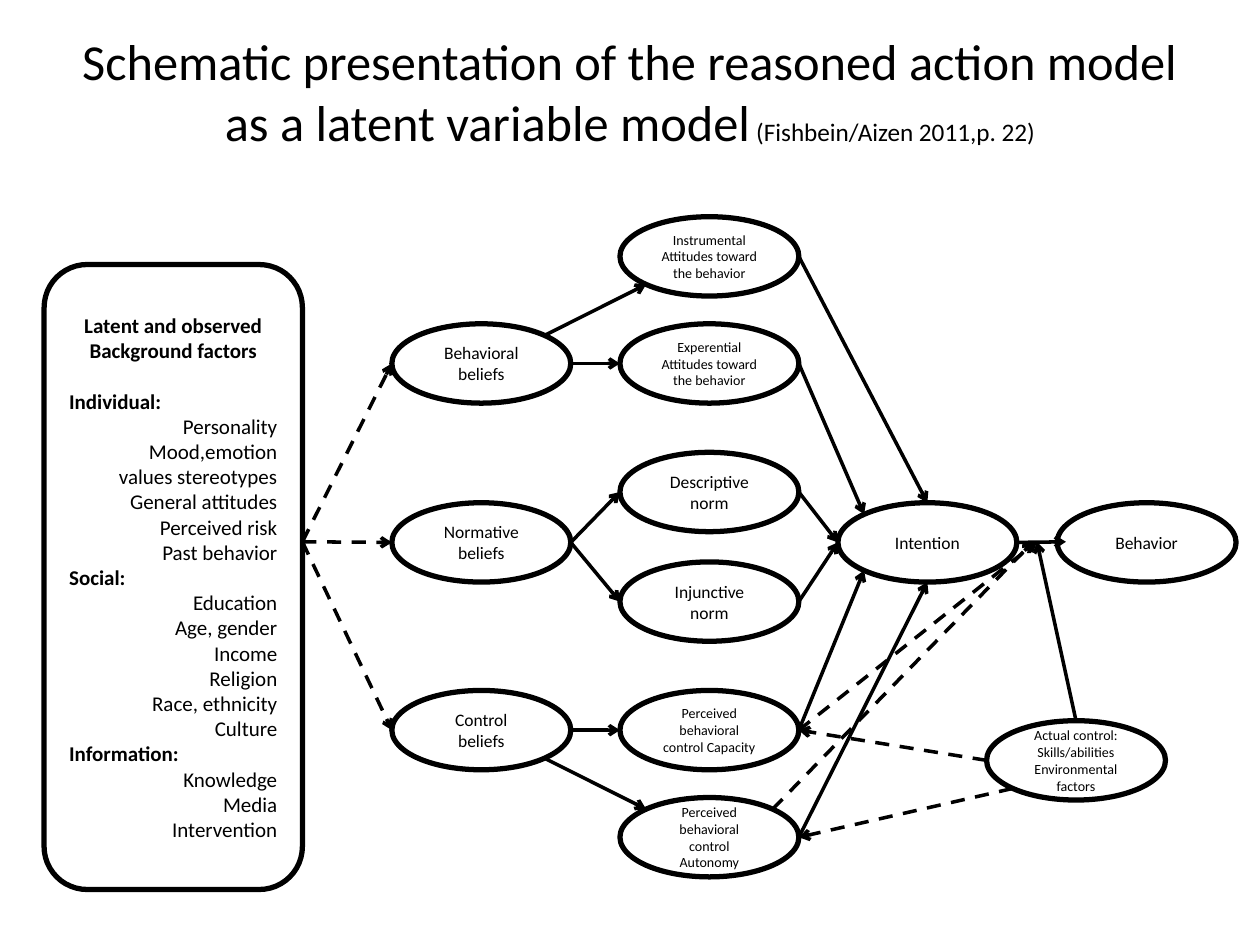
import math
from dataclasses import dataclass
from typing import NamedTuple

import pptx
import pptx.dml.color
import pptx.enum.dml
import pptx.enum.shapes
import pptx.enum.text
import pptx.oxml
import pptx.util
from pptx.util import Inches

ALIGN = pptx.enum.text.PP_ALIGN
MIDDLE = pptx.enum.text.MSO_ANCHOR.MIDDLE
SHAPES = pptx.enum.shapes.MSO_SHAPE


@dataclass(frozen=True)
class Theme:
    ink: pptx.dml.color.RGBColor = pptx.dml.color.RGBColor(0, 0, 0)
    font: str = "Calibri"
    title: float = 28.8
    source: float = 14.4
    factors: float = 12
    label: float = 10
    small: float = 8
    outline: float = 3
    arrow: float = 2


THEME = Theme()


class Point(NamedTuple):
    x: float
    y: float


@dataclass(frozen=True)
class Oval:
    left: float
    top: float
    lines: tuple[str, ...]
    size: float = THEME.label
    width: float = 1.42
    height: float = 0.63

    def at(self, degrees: float) -> Point:
        """Point on the rim, counted anticlockwise from the right."""
        angle = math.radians(degrees)
        return Point(self.left + self.width / 2 * (1 + math.cos(angle)),
                     self.top + self.height / 2 * (1 - math.sin(angle)))


class Arrow(NamedTuple):
    start: Point
    end: Point
    dashed: bool = False


RIGHT, TOP_RIGHT, TOP, TOP_LEFT, LEFT, BOTTOM_LEFT, BOTTOM, BOTTOM_RIGHT = range(0, 360, 45)
BELIEFS_X, FACTORS_X = 3.11, 4.92
MAIN_Y, BEHAVIORAL_Y, CONTROL_Y = 3.99, 2.57, 5.48

behavioral = Oval(BELIEFS_X, BEHAVIORAL_Y, ("Behavioral beliefs",))
normative = Oval(BELIEFS_X, MAIN_Y, ("Normative beliefs",))
control = Oval(BELIEFS_X, CONTROL_Y, ("Control beliefs",))
instrumental = Oval(FACTORS_X, 1.72, ("Instrumental Attitudes toward the behavior",), THEME.small)
experiential = Oval(FACTORS_X, BEHAVIORAL_Y, ("Experential Attitudes toward the behavior",), THEME.small)
descriptive = Oval(FACTORS_X, 3.59, ("Descriptive norm",))
injunctive = Oval(FACTORS_X, 4.46, ("Injunctive norm",))
capacity = Oval(FACTORS_X, CONTROL_Y, ("Perceived behavioral control Capacity",), THEME.small)
autonomy = Oval(FACTORS_X, 6.33, ("Perceived behavioral control Autonomy",), THEME.small)
intention = Oval(6.65, MAIN_Y, ("Intention",))
behavior = Oval(8.39, MAIN_Y, ("Behavior",))
actual = Oval(7.83, 5.72, ("Actual control:", "Skills/abilities Environmental factors"), THEME.small)

OVALS = (behavioral, normative, control, instrumental, experiential, descriptive,
         injunctive, capacity, autonomy, intention, behavior, actual)

background_exit = Point(2.4, 4.3)
moderation = Point(8.23, 4.3)

ARROWS = (
    *(Arrow(background_exit, belief.at(LEFT), True) for belief in (behavioral, normative, control)),
    Arrow(behavioral.at(TOP_RIGHT), instrumental.at(BOTTOM_LEFT)),
    Arrow(behavioral.at(RIGHT), experiential.at(LEFT)),
    Arrow(normative.at(RIGHT), descriptive.at(LEFT)),
    Arrow(normative.at(RIGHT), injunctive.at(LEFT)),
    Arrow(control.at(RIGHT), capacity.at(LEFT)),
    Arrow(control.at(BOTTOM_RIGHT), autonomy.at(TOP_LEFT)),
    Arrow(instrumental.at(RIGHT), intention.at(TOP)),
    Arrow(experiential.at(RIGHT), intention.at(TOP_LEFT)),
    Arrow(descriptive.at(RIGHT), intention.at(LEFT)),
    Arrow(injunctive.at(RIGHT), intention.at(LEFT)),
    Arrow(capacity.at(RIGHT), intention.at(BOTTOM_LEFT)),
    Arrow(autonomy.at(RIGHT), intention.at(BOTTOM)),
    Arrow(intention.at(RIGHT), Point(8.46, 4.3)),
    Arrow(actual.at(TOP), moderation),
    Arrow(actual.at(LEFT), capacity.at(RIGHT), True),
    Arrow(actual.at(BOTTOM_LEFT), autonomy.at(RIGHT), True),
    Arrow(capacity.at(RIGHT), moderation, True),
    Arrow(autonomy.at(TOP_RIGHT), Point(8.2, 4.3), True),
)

BACKGROUND_FACTORS = {
    "Individual:": ("Personality", "Mood,emotion", "values stereotypes",
                    "General attitudes", "Perceived risk", "Past behavior"),
    "Social:": ("Education", "Age, gender", "Income", "Religion", "Race, ethnicity", "Culture"),
    "Information:": ("Knowledge", "Media", "Intervention"),
}


def add_span(para, text: str, *, size: float, bold: bool = False) -> None:
    span = para.add_run()
    span.text = text
    span.font.name = THEME.font
    span.font.size = pptx.util.Pt(size)
    span.font.bold = bold
    span.font.color.rgb = THEME.ink


def next_para(frame, align):
    """Use the frame's first paragraph while it is empty, then add more."""
    first = frame.paragraphs[0]
    para = frame.add_paragraph() if first.runs else first
    para.alignment = align
    return para


def add_outline(page, kind, left: float, top: float, width: float, height: float):
    box = page.shapes.add_shape(kind, Inches(left), Inches(top), Inches(width), Inches(height))
    box.shadow.inherit = False
    box.fill.background()
    box.line.color.rgb = THEME.ink
    box.line.width = pptx.util.Pt(THEME.outline)
    box.text_frame.word_wrap = True
    box.text_frame.vertical_anchor = MIDDLE
    return box.text_frame


def add_oval(page, oval: Oval) -> None:
    frame = add_outline(page, SHAPES.OVAL, oval.left, oval.top, oval.width, oval.height)
    for line in oval.lines:
        add_span(next_para(frame, ALIGN.CENTER), line, size=oval.size)


def add_arrow(page, arrow: Arrow) -> None:
    line = page.shapes.add_connector(
        pptx.enum.shapes.MSO_CONNECTOR.STRAIGHT,
        *(Inches(value) for value in (*arrow.start, *arrow.end)))
    line.line.color.rgb = THEME.ink
    line.line.width = pptx.util.Pt(THEME.arrow)
    if arrow.dashed:
        line.line.dash_style = pptx.enum.dml.MSO_LINE.DASH
    namespace = pptx.oxml.ns.nsdecls("a")
    line.line._get_or_add_ln().append(pptx.oxml.parse_xml(f'<a:tailEnd {namespace} type="arrow"/>'))
    line._element.spPr.append(pptx.oxml.parse_xml(f"<a:effectLst {namespace}/>"))


def add_title(page) -> None:
    box = page.shapes.add_textbox(Inches(0.5), Inches(0.3), Inches(9), Inches(1.25))
    frame = box.text_frame
    frame.word_wrap = True
    frame.vertical_anchor = MIDDLE
    frame.margin_top, frame.margin_bottom = Inches(0), Inches(0.41)
    para = next_para(frame, ALIGN.CENTER)
    add_span(para, "Schematic presentation of the reasoned action model as a latent variable model",
             size=THEME.title)
    add_span(para, " (Fishbein/Aizen 2011,p. 22)", size=THEME.source)


def add_background_factors(page) -> None:
    frame = add_outline(page, SHAPES.ROUNDED_RECTANGLE, 0.35, 2.1, 2.05, 4.96)
    heading = next_para(frame, ALIGN.CENTER)
    heading.space_after = pptx.util.Pt(14.6)
    add_span(heading, "Latent and observed Background factors", size=THEME.factors, bold=True)
    for group, factors in BACKGROUND_FACTORS.items():
        add_span(next_para(frame, ALIGN.LEFT), group, size=THEME.factors, bold=True)
        for factor in factors:
            add_span(next_para(frame, ALIGN.RIGHT), factor, size=THEME.factors)


def main() -> None:
    deck = pptx.Presentation()
    deck.slide_width, deck.slide_height = Inches(10), Inches(7.5)
    page = deck.slides.add_slide(deck.slide_layouts[6])
    add_title(page)
    add_background_factors(page)
    for oval in OVALS:
        add_oval(page, oval)
    for arrow in ARROWS:
        add_arrow(page, arrow)
    deck.save("out.pptx")


if __name__ == "__main__":
    main()
